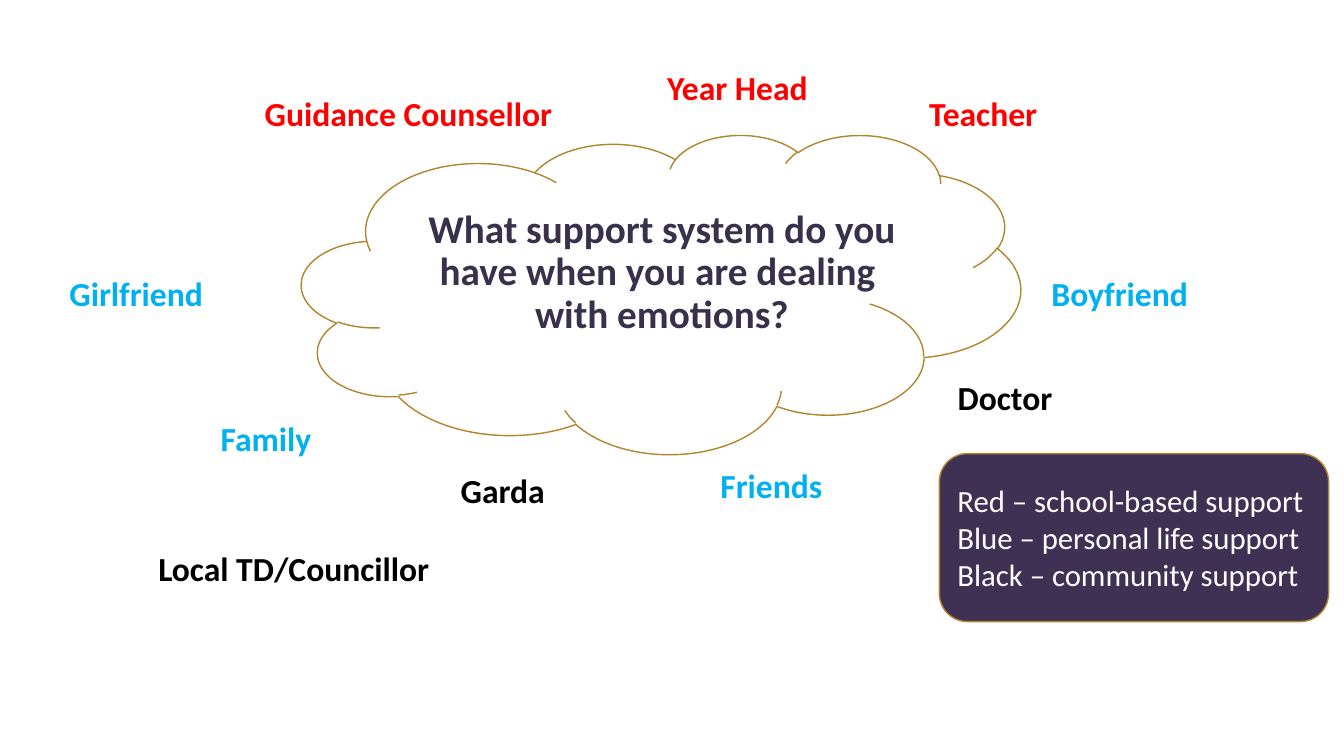
import dataclasses

import pptx
import pptx.dml.color
import pptx.enum.shapes
import pptx.enum.text
import pptx.util

Pt = pptx.util.Pt
SHAPE = pptx.enum.shapes.MSO_SHAPE
ALIGN = pptx.enum.text.PP_ALIGN
ANCHOR = pptx.enum.text.MSO_ANCHOR
FIT = pptx.enum.text.MSO_AUTO_SIZE


@dataclasses.dataclass(frozen=True)
class Theme:
    font: str = "Calibri"
    title_size: int = 28
    label_size: int = 24
    key_size: int = 22
    title: str = "39304C"
    panel: str = "3F3153"
    outline: str = "B3842E"
    white: str = "FFFFFF"
    school: str = "FF0000"
    personal: str = "00B0F0"
    community: str = "000000"


THEME = Theme()


def rgb(value):
    return pptx.dml.color.RGBColor.from_string(value)


def write(tf, text, *, size, color, bold=False, align=ALIGN.LEFT,
          spacing=1.0, anchor=ANCHOR.TOP, fit=FIT.NONE):
    """Fill a text frame, one paragraph per line; a vertical tab breaks a line."""
    tf.word_wrap = True
    tf.auto_size = fit
    tf.vertical_anchor = anchor
    tf.text = text
    for p in tf.paragraphs:
        p.alignment = align
        p.line_spacing = spacing
        p.space_before = Pt(0)
        for r in p.runs:
            r.font.name = THEME.font
            r.font.size = Pt(size)
            r.font.bold = bold
            r.font.color.rgb = rgb(color)


class SlideBuilder:
    def __init__(self, slide, theme):
        self.s = slide
        self.theme = theme

    def shape(self, kind, x, y, w, h, fill):
        sp = self.s.shapes.add_shape(kind, Pt(x), Pt(y), Pt(w), Pt(h))
        sp.shadow.inherit = False
        sp.fill.solid()
        sp.fill.fore_color.rgb = rgb(fill)
        sp.line.color.rgb = rgb(self.theme.outline)
        sp.line.width = Pt(1)
        return sp

    def title(self, text, x, y, w, h):
        """Place the title placeholder in front of everything drawn so far."""
        sp = self.s.shapes.title
        sp.left, sp.top, sp.width, sp.height = Pt(x), Pt(y), Pt(w), Pt(h)
        sp.element.getparent().append(sp.element)
        write(sp.text_frame, text, size=self.theme.title_size, color=self.theme.title,
              bold=True, align=ALIGN.CENTER, spacing=0.9)

    def key(self, text, x, y, w, h):
        sp = self.shape(SHAPE.ROUNDED_RECTANGLE, x, y, w, h, self.theme.panel)
        write(sp.text_frame, text, size=self.theme.key_size, color=self.theme.white,
              anchor=ANCHOR.MIDDLE)

    def label(self, text, x, y, color, w=216, h=36):
        sp = self.s.shapes.add_textbox(Pt(x), Pt(y), Pt(w), Pt(h))
        write(sp.text_frame, text, size=self.theme.label_size, color=color, bold=True,
              fit=FIT.SHAPE_TO_FIT_TEXT)


SUPPORTS = {
    THEME.personal: [
        ("Family", 150.5, 295),
        ("Friends", 507.5, 328.5),
        ("Boyfriend", 744, 191.5),
        ("Girlfriend", 42.5, 191.5),
    ],
    THEME.school: [
        ("Guidance Counsellor", 182, 62.5, 233),
        ("Year Head", 469.5, 44, 193),
        ("Teacher", 656.5, 62.5, 101.5),
    ],
    THEME.community: [
        ("Doctor", 677, 265.5),
        ("Garda", 322, 332),
        ("Local TD/Councillor", 106, 387.5),
    ],
}


def main():
    prs = pptx.Presentation()
    prs.slide_width, prs.slide_height = Pt(960), Pt(540)
    slide = SlideBuilder(prs.slides.add_slide(prs.slide_layouts[5]), THEME)

    slide.shape(SHAPE.CLOUD, 215.5, 96, 513.5, 228, THEME.white)
    slide.title("What support system do you have when you are dealing \vwith emotions?",
                275, 146, 395.5, 103.5)
    slide.key("Red – school-based support\n"
              "Blue – personal life support\n"
              "Black – community support", 671, 324, 278, 120)
    for color, labels in SUPPORTS.items():
        for text, x, y, *width in labels:
            slide.label(text, x, y, color, *width)

    prs.save("out.pptx")


if __name__ == "__main__":
    main()
